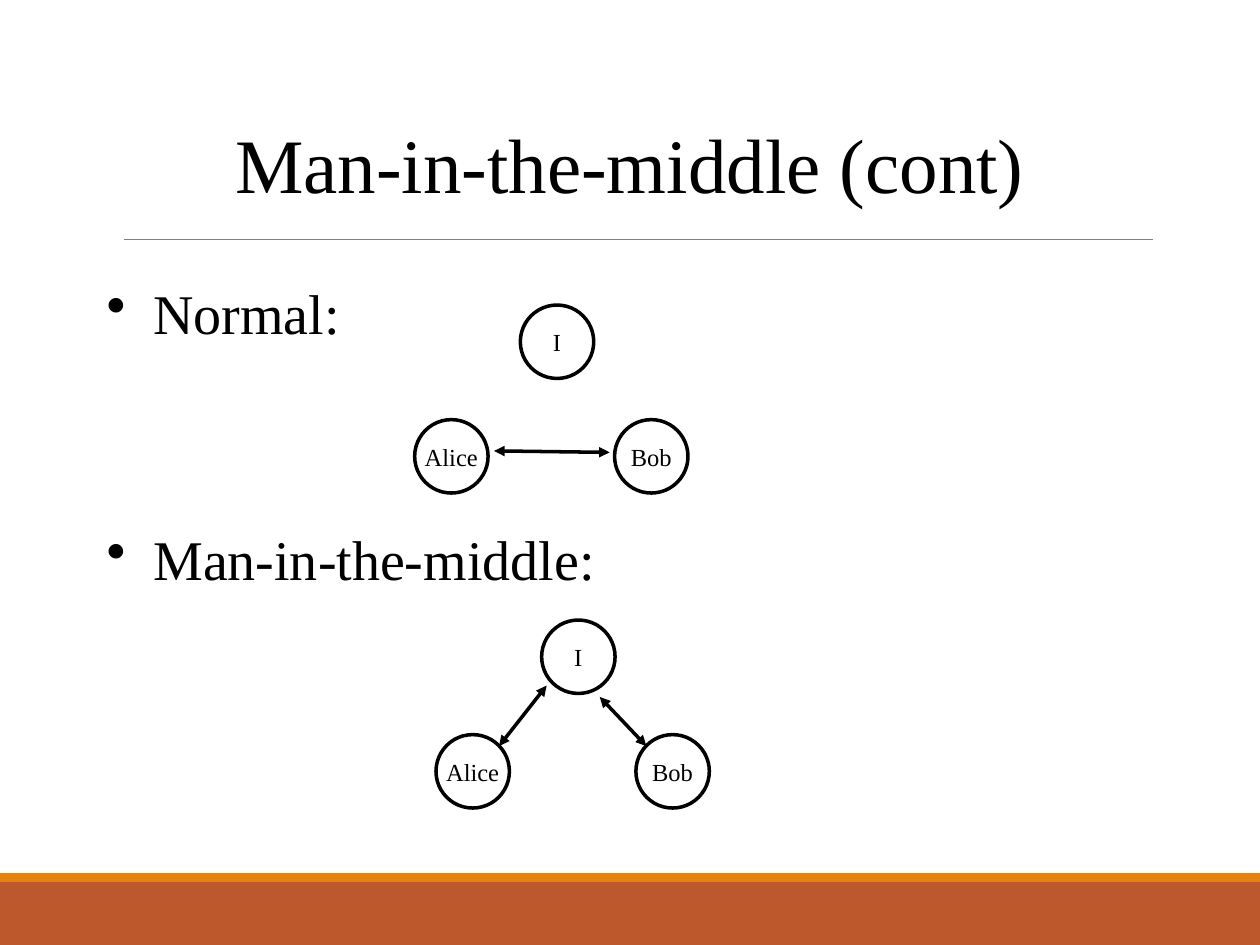
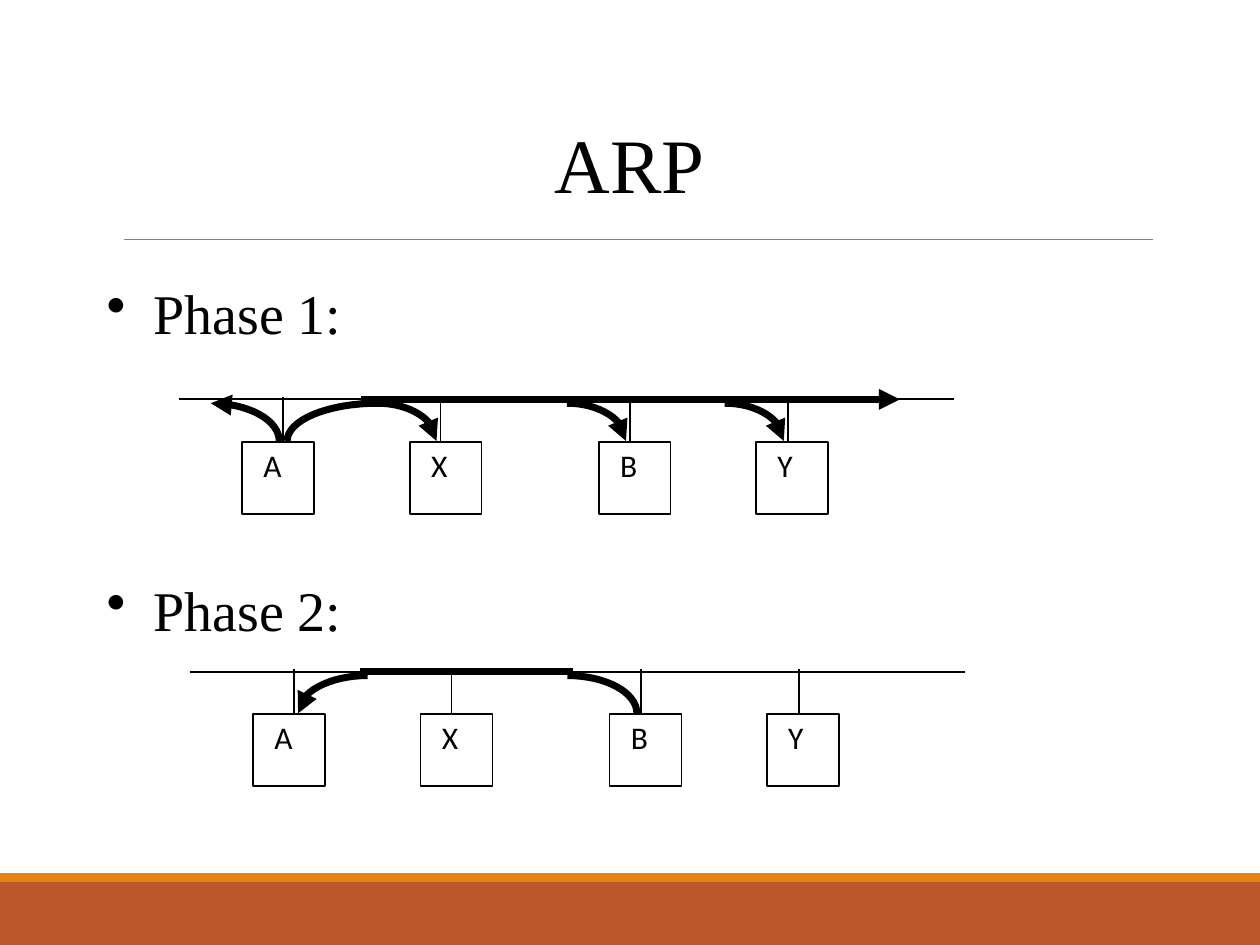
from math import cos, pi, sin

from lxml.etree import SubElement
from pptx import Presentation
from pptx.dml.color import RGBColor
from pptx.enum.shapes import MSO_CONNECTOR, MSO_SHAPE as SHAPE
from pptx.enum.text import MSO_ANCHOR as ANCHOR, PP_ALIGN as ALIGN
from pptx.oxml.ns import qn
from pptx.util import Cm, Pt

# Shared style
BLACK, WHITE = "000000", "FFFFFF"
RULE, BAND, STRIPE = "808080", "BD582C", "E48312"
SERIF, SANS = "Times New Roman", "Calibri"


def color(value):
    return RGBColor.from_string(value)


def write(p, text, size=14, font=SERIF, fill=BLACK, align=ALIGN.LEFT):
    p.alignment = align
    r = p.add_run()
    r.text = text
    r.font.size, r.font.name = Pt(size), font
    r.font.color.rgb = color(fill)


def add_bullet(p, indent=0.94):
    pPr = p._p.get_or_add_pPr()
    pPr.set("marL", str(Cm(indent)))
    pPr.set("indent", str(-Cm(indent)))
    clr = SubElement(pPr, qn("a:buClr"))
    SubElement(clr, qn("a:srgbClr"), val=BLACK)
    SubElement(pPr, qn("a:buChar"), char="•")


class Deck:
    def __init__(self):
        self.prs = Presentation()
        self.prs.slide_width, self.prs.slide_height = Cm(25.4), Cm(19.05)
        self.s = None

    def new_slide(self, title):
        self.s = self.prs.slides.add_slide(self.prs.slide_layouts[6])
        # Rule, footer band and stripe
        self.line(2.49, 4.83, 23.24, 4.83, width=0.5, stroke=RULE)
        self.shape(SHAPE.RECTANGLE, 0, 17.78, 25.4, 1.27, fill=BAND)
        self.shape(SHAPE.RECTANGLE, 0, 17.6, 25.4, 0.18, fill=STRIPE)
        # Title
        tf = self.text_box(1.9, 1.7, 21.6, 3.18)
        tf.vertical_anchor = ANCHOR.MIDDLE
        write(tf.paragraphs[0], title, size=44, align=ALIGN.CENTER)

    def text_box(self, x, y, w, h):
        tf = self.s.shapes.add_textbox(Cm(x), Cm(y), Cm(w), Cm(h)).text_frame
        tf.word_wrap = True
        return tf

    def bullets(self, first, second, gap):
        tf = self.text_box(1.9, 5.5, 21.6, 11.43)
        for i, text in enumerate((first, second)):
            p = tf.add_paragraph() if i else tf.paragraphs[0]
            p.space_before = Pt(gap if i else 0)
            add_bullet(p)
            write(p, text, size=32)

    def shape(self, kind, x, y, w, h, fill=None, width=None):
        sp = self.s.shapes.add_shape(kind, Cm(x), Cm(y), Cm(w), Cm(h))
        sp.shadow.inherit = False
        if fill:
            sp.fill.solid()
            sp.fill.fore_color.rgb = color(fill)
        else:
            sp.fill.background()
        if width:
            self.stroke(sp, width)
        else:
            sp.line.fill.background()
        return sp

    def stroke(self, sp, width, stroke=BLACK, head=False, tail=False):
        sp.line.width = Pt(width)
        sp.line.color.rgb = color(stroke)
        ln = sp._element.spPr.find(qn("a:ln"))
        for tag, wanted in (("a:headEnd", head), ("a:tailEnd", tail)):
            if wanted:
                SubElement(ln, qn(tag), type="triangle")

    def line(self, x1, y1, x2, y2, width=1, **ends):
        c = self.s.shapes.add_connector(
            MSO_CONNECTOR.STRAIGHT, Cm(x1), Cm(y1), Cm(x2), Cm(y2))
        self.stroke(c, width, **ends)
        SubElement(c._element.spPr, qn("a:effectLst"))

    def curve(self, foot, end, steps=16, **ends):
        """Quarter ellipse rising from foot and levelling off at end."""
        (x1, y1), (x2, y2) = foot, end
        angles = [pi / 2 * i / steps for i in range(steps + 1)]
        points = [(Cm(x1 + (x2 - x1) * (1 - cos(a))),
                   Cm(y1 + (y2 - y1) * sin(a))) for a in angles]
        builder = self.s.shapes.build_freeform(*points[0])
        builder.add_line_segments(points[1:], close=False)
        sp = builder.convert_to_shape()
        sp.shadow.inherit = False
        sp.fill.background()
        self.stroke(sp, 4, **ends)

    def person(self, name, x, y):
        tf = self.shape(SHAPE.OVAL, x, y, 1.48, 1.48, WHITE, 2).text_frame
        tf.margin_left = tf.margin_right = 0
        tf.margin_top = tf.margin_bottom = 0
        tf.word_wrap = False
        tf.vertical_anchor = ANCHOR.MIDDLE
        write(tf.paragraphs[0], name, align=ALIGN.CENTER)

    def people(self, x, y):
        self.person("Alice", x, y)
        self.person("Bob", x + 4.03, y)
        self.person("I", x + 2.13, y - 2.31)

    def host(self, name, x, y):
        tf = self.shape(SHAPE.RECTANGLE, x, y, 1.45, 1.45, width=1).text_frame
        tf.margin_left, tf.margin_top = Cm(0.43), Cm(0.08)
        tf.margin_right = tf.margin_bottom = 0
        tf.word_wrap = False
        tf.vertical_anchor = ANCHOR.TOP
        write(tf.paragraphs[0], name, size=18, font=SANS)

    def network(self, x, y):
        """Draw bus, hosts and drops; return the drop position of each host."""
        self.line(x, y, x + 15.62, y)
        drops = {}
        for name, left, drop in (("A", 1.27, 2.1), ("X", 4.65, 5.27),
                                 ("B", 8.46, 9.09), ("Y", 11.63, 12.27)):
            self.host(name, x + left, y + 0.86)
            drops[name] = x + drop
            self.line(x + drop, y + 0.86, x + drop, y - 0.05)
        return drops

    def hop(self, drop, bus_y, reach, **ends):
        """Curve between a host and the bus; the sign of reach is its side."""
        side = 0.08 if reach > 0 else -0.08
        self.curve((drop + side, bus_y + 0.84),
                   (drop + reach, bus_y + 0.08), **ends)


def man_in_the_middle(deck):
    deck.new_slide("Man-in-the-middle (cont)")
    deck.bullets("Normal:", "Man-in-the-middle:", gap=102)
    deck.people(8.36, 8.46)
    deck.people(8.79, 14.81)
    for ends in ((9.96, 9.09, 12.29, 9.12),
                 (10.06, 15.04, 11.02, 13.82),
                 (13.03, 15.04, 12.09, 14.05)):
        deck.line(*ends, width=2, head=True, tail=True)


def arp(deck):
    deck.new_slide("ARP")
    deck.bullets("Phase 1:", "Phase 2:", gap=131)

    # Phase 1: A broadcasts to every host
    x, y = 3.61, 8.05
    drops = deck.network(x, y)
    deck.line(x + 3.66, y, x + 14.53, y, width=4, tail=True)
    deck.hop(drops["A"], y, 1.91)
    deck.hop(drops["A"], y, -1.46, tail=True)
    for name in "XBY":
        deck.hop(drops[name], y, -1.27, head=True)

    # Phase 2: B answers A
    x, y = 3.83, 13.54
    drops = deck.network(x, y)
    deck.line(x + 3.43, y, x + 7.72, y, width=4)
    deck.hop(drops["B"], y, -1.48)
    deck.hop(drops["A"], y, 1.48, head=True)


def main():
    deck = Deck()
    man_in_the_middle(deck)
    arp(deck)
    deck.prs.save("out.pptx")


if __name__ == "__main__":
    main()
